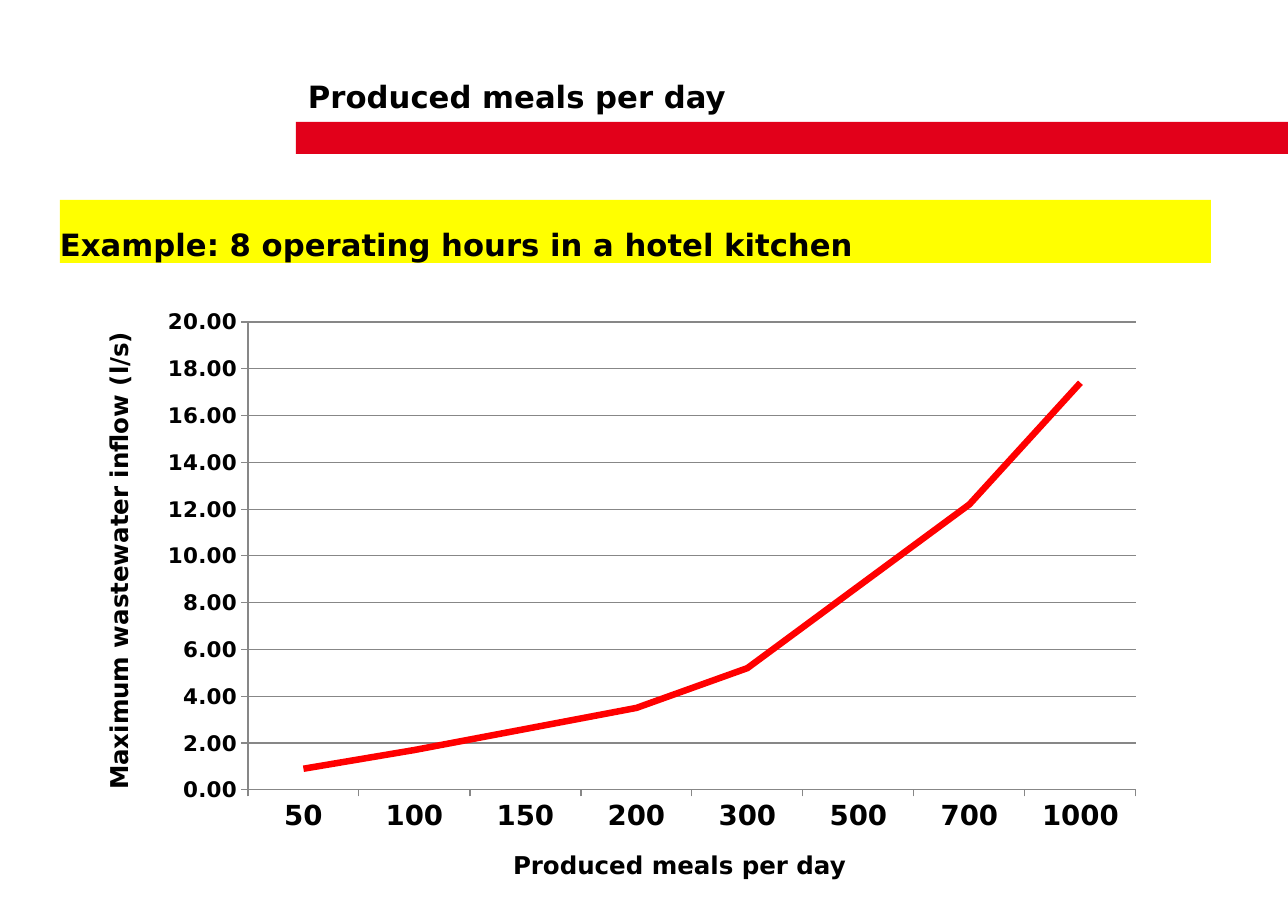
import pptx
import pptx.chart.data
import pptx.dml.color
import pptx.enum.chart
import pptx.enum.shapes
import pptx.enum.text
import pptx.oxml
import pptx.oxml.ns
import pptx.util
from dataclasses import dataclass

TITLE = "Produced meals per day"
EXAMPLE = "Example: 8 operating hours in a hotel kitchen"
INFLOW_LABEL = "Maximum wastewater inflow (l/s)"
MEALS_LABEL = "Produced meals per day"
INFLOW_BY_MEALS = {
    "50": 0.9, "100": 1.7, "150": 2.6, "200": 3.5,
    "300": 5.2, "500": 8.7, "700": 12.2, "1000": 17.4,
}

# Left, top, width, height in px
SLIDE_SIZE = (1288, 911)
RED_BAR = (296, 122, 992, 32)
TITLE_BOX = (308, 30, 786, 85)
EXAMPLE_BOX = (60, 200, 1151, 63)
CHART_BOX = (149, 299, 1008, 545)
PLOT_BOX = (248, 322, 888, 468)
INFLOW_BOX = (-151, 506, 505, 63)
MEALS_BOX = (513, 836, 354, 43)
EMU_PER_PX = 914400 / 110.4


@dataclass(frozen=True)
class Theme:
    font: str = "DejaVu Sans"
    text: str = "000000"
    bar: str = "E2001A"
    highlight: str = "FFFF00"
    curve: str = "FF0000"
    grid: str = "878787"
    heading_size: int = 20
    label_size: int = 16
    category_size: int = 18
    value_size: int = 14
    curve_width: float = 4.25
    grid_width: float = 0.75


THEME = Theme()


def px(length):
    return pptx.util.Emu(round(length * EMU_PER_PX))


def color(value):
    return pptx.dml.color.RGBColor.from_string(value)


def style_font(font, size):
    font.name = THEME.font
    font.size = pptx.util.Pt(size)
    font.bold = True
    font.color.rgb = color(THEME.text)


def add_bar(slide, box, fill):
    shape = slide.shapes.add_shape(
        pptx.enum.shapes.MSO_SHAPE.RECTANGLE, *map(px, box))
    shape.shadow.inherit = False
    shape.fill.solid()
    shape.fill.fore_color.rgb = color(fill)
    shape.line.fill.background()
    return shape


def add_text(slide, text, box, size, fill=None, rotation=0):
    """Add bold, bottom-aligned text, on a coloured bar if fill is given."""
    if fill:
        shape = add_bar(slide, box, fill)
    else:
        shape = slide.shapes.add_textbox(*map(px, box))
    shape.rotation = rotation
    frame = shape.text_frame
    frame.word_wrap = True
    frame.vertical_anchor = pptx.enum.text.MSO_ANCHOR.BOTTOM
    frame.margin_left = frame.margin_right = 0
    frame.margin_top = frame.margin_bottom = 0
    paragraph = frame.paragraphs[0]
    paragraph.alignment = pptx.enum.text.PP_ALIGN.LEFT
    paragraph.line_spacing = 1.1
    run = paragraph.add_run()
    run.text = text
    style_font(run.font, size)


def style_line(line):
    line.color.rgb = color(THEME.grid)
    line.width = pptx.util.Pt(THEME.grid_width)


def place_plot(chart):
    """Fix the inner plot area to PLOT_BOX within CHART_BOX."""
    left, top, width, height = CHART_BOX
    plot_left, plot_top, plot_width, plot_height = PLOT_BOX
    fractions = {
        "x": (plot_left - left) / width,
        "y": (plot_top - top) / height,
        "w": plot_width / width,
        "h": plot_height / height,
    }
    modes = "".join(f'<c:{side}Mode val="edge"/>' for side in "xy")
    values = "".join(f'<c:{name} val="{value:.4f}"/>'
                     for name, value in fractions.items())
    layout = pptx.oxml.parse_xml(
        f'<c:layout {pptx.oxml.ns.nsdecls("c")}><c:manualLayout>'
        f'<c:layoutTarget val="inner"/>{modes}{values}'
        '</c:manualLayout></c:layout>')
    plot_area = chart.element.find(".//" + pptx.oxml.ns.qn("c:plotArea"))
    old_layout = plot_area.find(pptx.oxml.ns.qn("c:layout"))
    if old_layout is not None:
        plot_area.remove(old_layout)
    plot_area.insert(0, layout)


def add_inflow_chart(slide):
    data = pptx.chart.data.CategoryChartData(number_format="0.00")
    data.categories = list(INFLOW_BY_MEALS)
    data.add_series("Series 1", list(INFLOW_BY_MEALS.values()))
    chart = slide.shapes.add_chart(
        pptx.enum.chart.XL_CHART_TYPE.LINE, *map(px, CHART_BOX), data).chart
    chart.has_legend = False
    chart.has_title = False
    style_font(chart.font, THEME.value_size)
    place_plot(chart)

    for axis, size in ((chart.category_axis, THEME.category_size),
                       (chart.value_axis, THEME.value_size)):
        style_font(axis.tick_labels.font, size)
        style_line(axis.format.line)
        axis.major_tick_mark = pptx.enum.chart.XL_TICK_MARK.OUTSIDE
        axis.minor_tick_mark = pptx.enum.chart.XL_TICK_MARK.NONE

    inflow = chart.value_axis
    inflow.minimum_scale, inflow.maximum_scale, inflow.major_unit = 0, 20, 2
    inflow.has_major_gridlines = True
    style_line(inflow.major_gridlines.format.line)
    inflow.tick_labels.number_format = "0.00"
    inflow.tick_labels.number_format_is_linked = False

    plot = chart.plots[0]
    plot.vary_by_categories = False
    curve = plot.series[0]
    curve.smooth = False
    curve.marker.style = pptx.enum.chart.XL_MARKER_STYLE.NONE
    curve.format.line.color.rgb = color(THEME.curve)
    curve.format.line.width = pptx.util.Pt(THEME.curve_width)


def main():
    presentation = pptx.Presentation()
    presentation.slide_width, presentation.slide_height = map(px, SLIDE_SIZE)
    slide = presentation.slides.add_slide(presentation.slide_layouts[6])
    add_bar(slide, RED_BAR, THEME.bar)
    add_text(slide, TITLE, TITLE_BOX, THEME.heading_size)
    add_text(slide, EXAMPLE, EXAMPLE_BOX, THEME.heading_size,
             fill=THEME.highlight)
    add_inflow_chart(slide)
    add_text(slide, INFLOW_LABEL, INFLOW_BOX, THEME.label_size, rotation=270)
    add_text(slide, MEALS_LABEL, MEALS_BOX, THEME.label_size)
    presentation.save("out.pptx")


if __name__ == "__main__":
    main()
